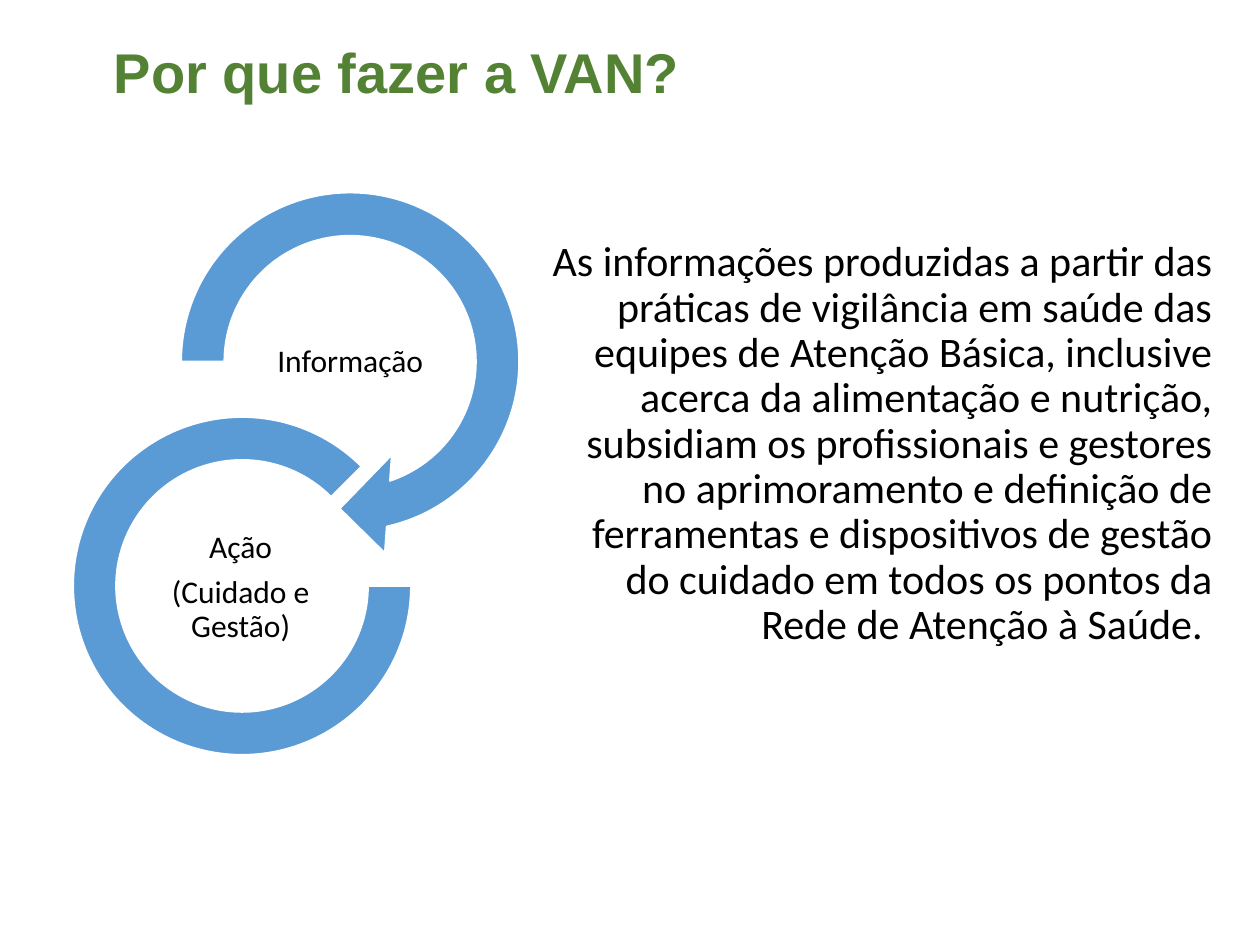
from pptx import Presentation
from pptx.dml.color import RGBColor
from pptx.enum.shapes import MSO_SHAPE
from pptx.enum.text import MSO_ANCHOR, PP_ALIGN
from pptx.util import Pt

TOP, MIDDLE, BOTTOM = MSO_ANCHOR.TOP, MSO_ANCHOR.MIDDLE, MSO_ANCHOR.BOTTOM
CENTER, RIGHT = PP_ALIGN.CENTER, PP_ALIGN.RIGHT
COLORS = {"title": "548235", "text": "000000", "ring": "5B9BD5", "edge": "FFFFFF"}

deck = Presentation()
deck.slide_width, deck.slide_height = Pt(720), Pt(540)
slide = deck.slides.add_slide(deck.slide_layouts[6])


def add_text(text, box, size, color="text", font="Calibri", bold=False,
             align=CENTER, anchor=TOP, insets=(7.2, 3.6, 7.2, 3.6),
             line_spacing=1.0, space_after=0):
    frame = slide.shapes.add_textbox(*map(Pt, box)).text_frame
    frame.word_wrap = True
    frame.vertical_anchor = anchor
    (frame.margin_left, frame.margin_top,
     frame.margin_right, frame.margin_bottom) = map(Pt, insets)
    frame.text = text
    for paragraph in frame.paragraphs:
        paragraph.alignment = align
        paragraph.line_spacing = line_spacing
        paragraph.space_after = Pt(space_after)
        for run in paragraph.runs:
            run.font.size = Pt(size)
            run.font.name = font
            run.font.bold = bold
            run.font.color.rgb = RGBColor.from_string(COLORS[color])


# Explanation on the right
add_text(
    "As informações produzidas a partir das práticas de vigilância em saúde "
    "das equipes de Atenção Básica, inclusive acerca da alimentação e nutrição, "
    "subsidiam os profissionais e gestores no aprimoramento e definição de "
    "ferramentas e dispositivos de gestão do cuidado em todos os pontos da "
    "Rede de Atenção à Saúde. ",
    (303.1, 133.9, 396.7, 308.9), 24, align=RIGHT, line_spacing=0.9,
    insets=(12.2, 3.6, 7.2, 3.6))

# Title
add_text("Por que fazer a VAN?", (36.7, 5.8, 380.2, 57.6), 32,
         color="title", font="Arial", bold=True, anchor=BOTTOM)

# Cycle: each ring with its label
cycle = [
    (MSO_SHAPE.CIRCULAR_ARROW, (87.8, 94.3, 224.6, 224.6),
     (0.1098, 11.423, 45, 108, 0.125),
     "Informação", (137.5, 175.7)),
    (MSO_SHAPE.BLOCK_ARC, (41.8, 238.3, 193, 193),
     (0, 189, 0.127),
     "Ação\n(Cuidado e Gestão)", (74.9, 304.6)),
]
for preset, ring_box, adjustments, label, label_corner in cycle:
    ring = slide.shapes.add_shape(preset, *map(Pt, ring_box))
    for i, value in enumerate(adjustments):
        ring.adjustments[i] = value
    ring.shadow.inherit = False
    ring.fill.solid()
    ring.fill.fore_color.rgb = RGBColor.from_string(COLORS["ring"])
    ring.line.color.rgb = RGBColor.from_string(COLORS["edge"])
    ring.line.width = Pt(1)
    add_text(label, (*label_corner, 125.3, 62.6), 18, anchor=MIDDLE,
             insets=(0.9,) * 4, line_spacing=0.9, space_after=6.3)

deck.save("out.pptx")
